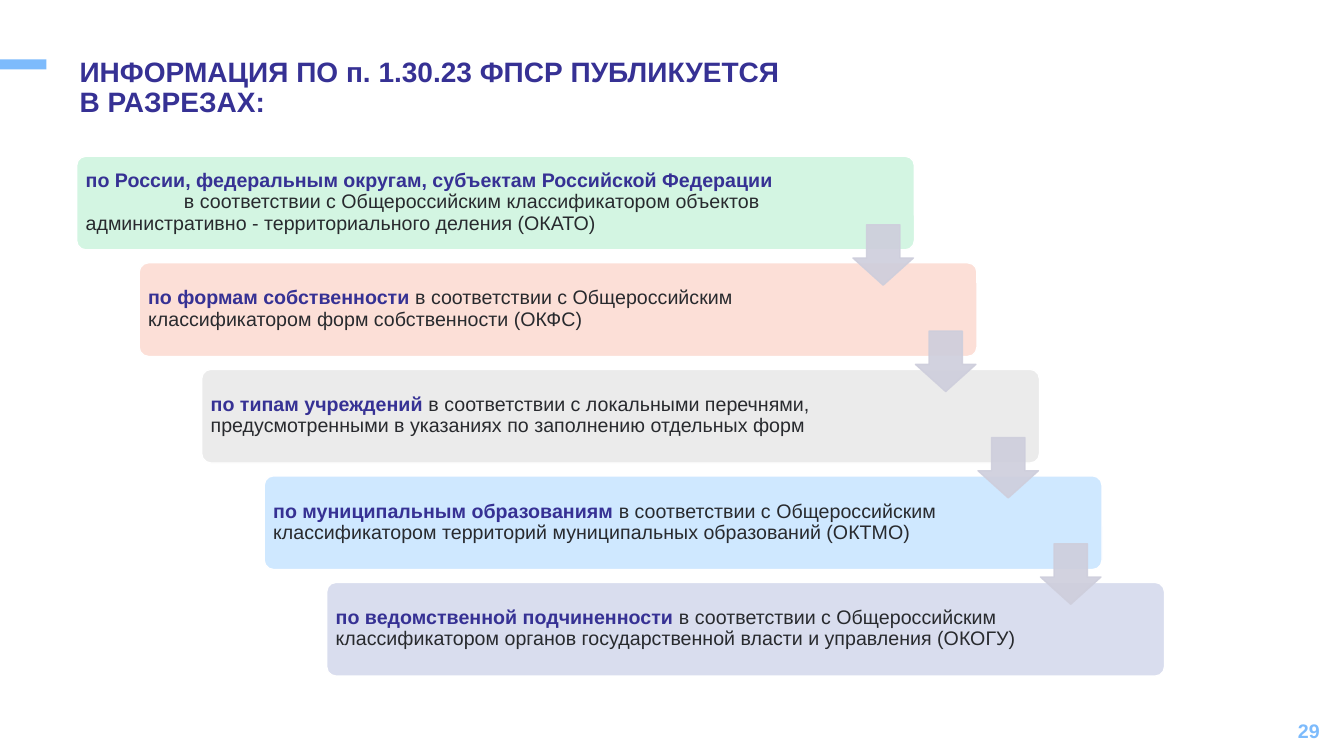
from dataclasses import dataclass

from lxml import etree
from pptx import Presentation
from pptx.dml.color import RGBColor
from pptx.enum.shapes import MSO_SHAPE
from pptx.enum.text import MSO_ANCHOR, PP_ALIGN
from pptx.oxml.ns import qn
from pptx.util import Inches, Pt

RECTANGLE = MSO_SHAPE.RECTANGLE
ROUNDED = MSO_SHAPE.ROUNDED_RECTANGLE
DOWN_ARROW = MSO_SHAPE.DOWN_ARROW
TOP, MIDDLE = MSO_ANCHOR.TOP, MSO_ANCHOR.MIDDLE
LEFT, RIGHT = PP_ALIGN.LEFT, PP_ALIGN.RIGHT

INDIGO = RGBColor(0x36, 0x31, 0x94)
INK = RGBColor(0x28, 0x2A, 0x2E)
SKY = RGBColor(0x7D, 0xBB, 0xFC)
WHITE = RGBColor(0xFF, 0xFF, 0xFF)
MINT = RGBColor(0xD3, 0xF5, 0xE2)
PEACH = RGBColor(0xFC, 0xDF, 0xD7)
GREY = RGBColor(0xEB, 0xEB, 0xEB)
PALE_BLUE = RGBColor(0xCF, 0xE8, 0xFF)
LAVENDER = RGBColor(0xD9, 0xDD, 0xEE)
ARROW_GREY = RGBColor(0xCE, 0xCE, 0xDC)

# The grid has square cells of a tenth of an inch
CELL = Inches(0.1)
STEP_COLUMNS, STEP_ROWS = 6.2, 10.57
ARROW_STEP_ROWS = 10.55


@dataclass(frozen=True)
class Area:
    column: float
    row: float
    columns: float
    rows: float

    def emu(self) -> list[int]:
        return [round(n * CELL) for n in (self.column, self.row, self.columns, self.rows)]

    def moved(self, columns: float, rows: float) -> "Area":
        return Area(self.column + columns, self.row + rows, self.columns, self.rows)


@dataclass(frozen=True)
class Span:
    text: str
    color: RGBColor
    size: int = 14
    bold: bool = True


@dataclass(frozen=True)
class Section:
    heading: str
    detail: str
    fill: RGBColor
    detail_indent: float = 0  # columns; when set, the detail starts its own paragraph


FIRST_BAR = Area(7.6, 15.5, 83.1, 9.3)
FIRST_LABEL = Area(7.9, 15.7, 70.3, 8.8)
FIRST_ARROW = Area(84.6, 22.3, 6, 6)

SECTIONS = [
    Section("по России, федеральным округам, субъектам Российской Федерации",
            "в соответствии с Общероссийским классификатором объектов "
            "административно - территориального деления (ОКАТО)", MINT, 9.75),
    Section("по формам собственности ",
            "в соответствии с Общероссийским классификатором форм собственности (ОКФС)", PEACH),
    Section("по типам учреждений ",
            "в соответствии с локальными перечнями, предусмотренными в указаниях "
            "по заполнению отдельных форм", GREY),
    Section("по муниципальным образованиям ",
            "в соответствии с Общероссийским классификатором территорий "
            "муниципальных образований (ОКТМО)", PALE_BLUE),
    Section("по ведомственной подчиненности ",
            "в соответствии с Общероссийским классификатором органов "
            "государственной власти и управления (ОКОГУ)", LAVENDER),
]


def add_block(page, kind, area: Area, fill: RGBColor, line: RGBColor | None = None,
              adjustments: tuple = (), opacity: int = 100) -> None:
    block = page.shapes.add_shape(kind, *area.emu())
    block.shadow.inherit = False
    block.fill.solid()
    block.fill.fore_color.rgb = fill
    if line is None:
        block.line.fill.background()
    else:
        block.line.color.rgb = line
        block.line.width = Pt(1)
    for index, value in enumerate(adjustments):
        block.adjustments[index] = value
    if opacity < 100:
        for color in block.element.spPr.iter(qn("a:srgbClr")):
            etree.SubElement(color, qn("a:alpha")).set("val", str(opacity * 1000))


def add_text(page, area: Area, paragraphs: list[list[Span]], margins: tuple[float, float],
             anchor=MIDDLE, align=LEFT, spacing: float = 0.9):
    box = page.shapes.add_textbox(*area.emu())
    frame = box.text_frame
    side, edge = (Inches(margin) for margin in margins)
    frame_format = {"word_wrap": True, "vertical_anchor": anchor, "margin_left": side,
                    "margin_right": side, "margin_top": edge, "margin_bottom": edge}
    for name, value in frame_format.items():
        setattr(frame, name, value)
    for index, spans in enumerate(paragraphs):
        para = frame.paragraphs[0] if index == 0 else frame.add_paragraph()
        para_format = {"alignment": align, "line_spacing": spacing,
                       "space_before": Pt(0), "space_after": Pt(0)}
        for name, value in para_format.items():
            setattr(para, name, value)
        for span in spans:
            run = para.add_run()
            run.text = span.text
            run_format = {"name": "Arial", "size": Pt(span.size), "bold": span.bold}
            for name, value in run_format.items():
                setattr(run.font, name, value)
            run.font.color.rgb = span.color
    return frame


def add_section(page, section: Section, index: int) -> None:
    shift = (index * STEP_COLUMNS, index * STEP_ROWS)
    add_block(page, ROUNDED, FIRST_BAR.moved(*shift), section.fill, WHITE, (0.1,))
    heading = Span(section.heading, INDIGO)
    detail = Span(section.detail, INK, bold=False)
    paragraphs = [[heading], [detail]] if section.detail_indent else [[heading, detail]]
    frame = add_text(page, FIRST_LABEL.moved(*shift), paragraphs, (0.06, 0.06))
    if section.detail_indent:
        properties = frame.paragraphs[1]._p.get_or_add_pPr()
        properties.set("marL", "0")
        properties.set("indent", str(round(section.detail_indent * CELL)))


def main() -> None:
    deck = Presentation()
    deck.slide_width, deck.slide_height = Inches(13.33), Inches(7.5)
    page = deck.slides.add_slide(deck.slide_layouts[6])

    # Accent, page number and title
    add_block(page, RECTANGLE, Area(0, 5.9, 4.6, 1), SKY)
    add_text(page, Area(102, 70.5, 30, 4), [[Span("29", SKY)]], (0.11, 0.06),
             align=RIGHT, spacing=1.0)
    title = [[Span("ИНФОРМАЦИЯ ПО п. 1.30.23 ФПСР ПУБЛИКУЕТСЯ", INDIGO, 20)],
             [Span("В РАЗРЕЗАХ:", INDIGO, 20)]]
    add_text(page, Area(6.8, 5.2, 88.6, 5.7), title, (0.11, 0.06), anchor=TOP)

    # Staircase of bars, then the arrows over their joints
    for index, section in enumerate(SECTIONS):
        add_section(page, section, index)
    for index in range(len(SECTIONS) - 1):
        area = FIRST_ARROW.moved(index * STEP_COLUMNS, index * ARROW_STEP_ROWS)
        add_block(page, DOWN_ARROW, area, ARROW_GREY, ARROW_GREY, (0.55, 0.45), opacity=90)

    deck.save("out.pptx")


if __name__ == "__main__":
    main()
